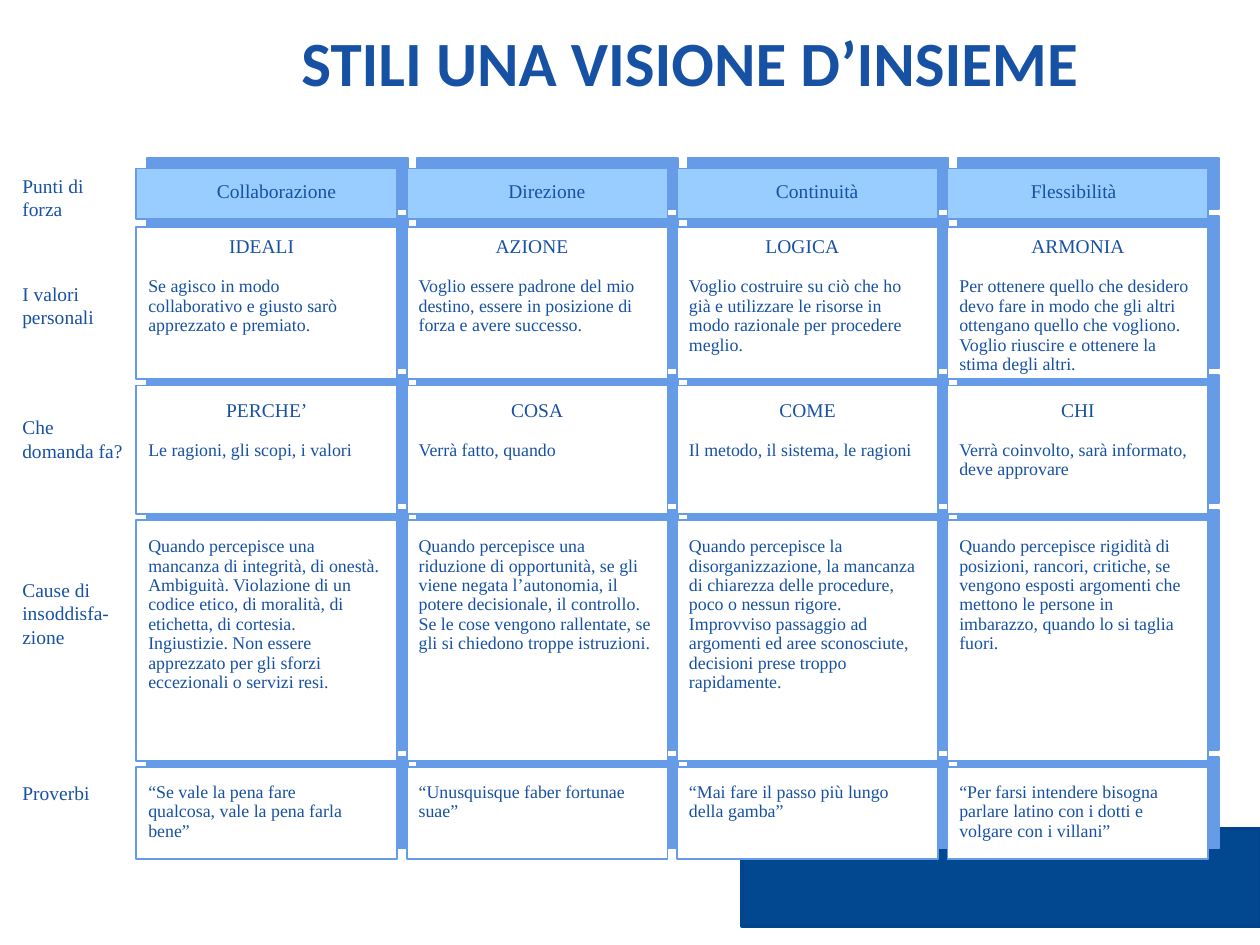
import pptx
import pptx.util
import pptx.dml.color
import pptx.enum.shapes
import pptx.enum.text
import pptx.oxml
import pptx.oxml.ns

Cm, Pt = pptx.util.Cm, pptx.util.Pt
RGB = pptx.dml.color.RGBColor.from_string
ALIGN = pptx.enum.text.PP_ALIGN
AUTO = pptx.enum.text.MSO_AUTO_SIZE

COLORS = {"text": "1751A3", "edge": "669BE8", "head": "99CCFF",
          "cell": "FFFFFF", "band": "014890", "rim": "00448D"}
FONTS = {
    "title": {"name": "Calibri", "size": Pt(36), "bold": True},
    "head": {"name": "Times New Roman", "size": Pt(11.1)},
    "body": {"name": "Times New Roman", "size": Pt(10.2)},
}
INSETS = {"margin_left": Cm(0.2), "margin_right": Cm(0.2),
          "margin_top": Cm(0.1), "margin_bottom": Cm(0.1)}

# Row label: top, width, height, text
LABELS = [
    (3.38, 2.44, 1.19, "Punti di forza"),
    (5.56, 2.79, 1.19, "I valori personali"),
    (8.25, 2.59, 1.19, "Che domanda fa?"),
    (11.53, 3.02, 1.65, "Cause di insoddisfa-zione"),
    (15.62, 4.01, 0.71, "Proverbi"),
]

# Row of boxes: top, height, text top, text shift, text widths, text lines
ROWS = [
    (3.4, 1.02, 3.58, -0.07, (5.79, 5.79, 5.79, 5.23), (1, 1, 1, 1)),
    (4.57, 3.07, 4.7, 0.04, (4.97, 4.97, 4.97, 5.18), (5, 5, 6, 7)),
    (7.77, 2.59, 8, 0.04, (5.18,) * 4, (3, 3, 3, 4)),
    (10.49, 4.85, 10.72, 0.04, (5.18,) * 4, (8, 6, 8, 6)),
    (15.47, 1.85, 15.67, 0.04, (4.72,) * 4, (3, 2, 2, 3)),
]

# One style per row: heading only, heading with body, or body only
STYLES = ["head", "both", "both", "body", "body"]

# Each column holds one list of paragraphs per row
COLUMNS = [
    [["Collaborazione"],
     ["IDEALI", "Se agisco in modo collaborativo e giusto sarò apprezzato e premiato."],
     ["PERCHE’", "Le ragioni, gli scopi, i valori"],
     ["Quando percepisce una mancanza di integrità, di onestà.",
      "Ambiguità. Violazione di un codice etico, di moralità, di etichetta, di cortesia.",
      "Ingiustizie. Non essere apprezzato per gli sforzi eccezionali o servizi resi."],
     ["“Se vale la pena fare qualcosa, vale la pena farla bene”"]],
    [["Direzione"],
     ["AZIONE", "Voglio essere padrone del mio destino, essere in posizione di forza "
      "e avere successo."],
     ["COSA", "Verrà fatto, quando"],
     ["Quando percepisce una riduzione di opportunità, se gli viene negata l’autonomia, "
      "il potere decisionale, il controllo. Se le cose vengono rallentate, se gli si "
      "chiedono troppe istruzioni."],
     ["“Unusquisque faber fortunae suae”"]],
    [["Continuità"],
     ["LOGICA", "Voglio costruire su ciò che ho già e utilizzare le risorse in modo "
      "razionale per procedere meglio."],
     ["COME", "Il metodo, il sistema, le ragioni"],
     ["Quando percepisce la disorganizzazione, la mancanza di chiarezza delle procedure, "
      "poco o nessun rigore.",
      "Improvviso passaggio ad argomenti ed aree sconosciute, decisioni prese troppo "
      "rapidamente."],
     ["“Mai fare il passo più lungo della gamba”"]],
    [["Flessibilità"],
     ["ARMONIA", "Per ottenere quello che desidero devo fare in modo che gli altri "
      "ottengano quello che vogliono. Voglio riuscire e ottenere la stima degli altri."],
     ["CHI", "Verrà coinvolto, sarà informato, deve approvare"],
     ["Quando percepisce rigidità di posizioni, rancori, critiche, se vengono esposti "
      "argomenti che mettono le persone in imbarazzo, quando lo si taglia fuori."],
     ["“Per farsi intendere bisogna parlare latino con i dotti e volgare con i villani”"]],
]


def style(para, kind):
    for key, val in FONTS[kind].items():
        setattr(para.font, key, val)
    para.font.color.rgb = RGB(COLORS["text"])


def add_rect(left, top, width, height, fill, line, weight):
    rect = slide.shapes.add_shape(pptx.enum.shapes.MSO_SHAPE.RECTANGLE,
                                  Cm(left), Cm(top), Cm(width), Cm(height))
    rect.shadow.inherit = False
    rect.fill.solid()
    rect.fill.fore_color.rgb = RGB(COLORS[fill])
    rect.line.color.rgb = RGB(COLORS[line])
    rect.line.width = Pt(weight)
    return rect


deck = pptx.Presentation()
deck.slide_width, deck.slide_height = Cm(25.4), Cm(19.05)
slide = deck.slides.add_slide(deck.slide_layouts[5])

add_rect(14.96, 16.71, 10.44, 1.96, "band", "rim", 2)

title = slide.shapes.title
title.left, title.top, title.width, title.height = Cm(3.99), Cm(0.48), Cm(19.84), Cm(1.52)
frame = title.text_frame
frame.text = "STILI UNA VISIONE D’INSIEME"
frame.auto_size = AUTO.NONE
frame.vertical_anchor = pptx.enum.text.MSO_ANCHOR.MIDDLE
for side in INSETS:
    setattr(frame, side, 0)
frame.paragraphs[0].alignment = ALIGN.CENTER
style(frame.paragraphs[0], "title")

for top, width, height, text in LABELS:
    frame = slide.shapes.add_textbox(Cm(0.2), Cm(top), Cm(width), Cm(height)).text_frame
    frame.word_wrap = True
    frame.auto_size = AUTO.SHAPE_TO_FIT_TEXT
    frame.text = text
    style(frame.paragraphs[0], "head")

for col, cells in enumerate(COLUMNS):
    left = 2.75 + 5.45 * col
    # Bottom row first, so each box covers the shadow of the one below
    for (top, height, start, shift, widths, lines), look, texts in reversed(
            list(zip(ROWS, STYLES, cells))):
        fill = "head" if look == "head" else "cell"
        rect = add_rect(left, top, 5.26, height, fill, "edge", 1)
        effects = rect._element.spPr.find(pptx.oxml.ns.qn("a:effectLst"))
        effects.append(pptx.oxml.parse_xml(
            f'<a:outerShdw {pptx.oxml.ns.nsdecls("a")} dist="{Pt(8.5)}" dir="18900000" '
            f'algn="ctr" rotWithShape="0"><a:srgbClr val="{COLORS["edge"]}"/></a:outerShdw>'))

        box = slide.shapes.add_textbox(Cm(left + shift), Cm(start), Cm(widths[col]),
                                       Cm(0.22 + 0.39 * lines[col]))
        frame = box.text_frame
        frame.word_wrap = True
        frame.auto_size = AUTO.SHAPE_TO_FIT_TEXT
        for side, inset in INSETS.items():
            setattr(frame, side, inset)
        frame.text = "\n".join(texts)
        for i, para in enumerate(frame.paragraphs):
            head = look != "body" and i == 0
            para.line_spacing = Pt(11.1)
            para.alignment = ALIGN.CENTER if head else ALIGN.LEFT
            if look == "both" and i == 1:
                para.space_before = Pt(11.1)
            style(para, "head" if head else "body")

deck.save("out.pptx")
